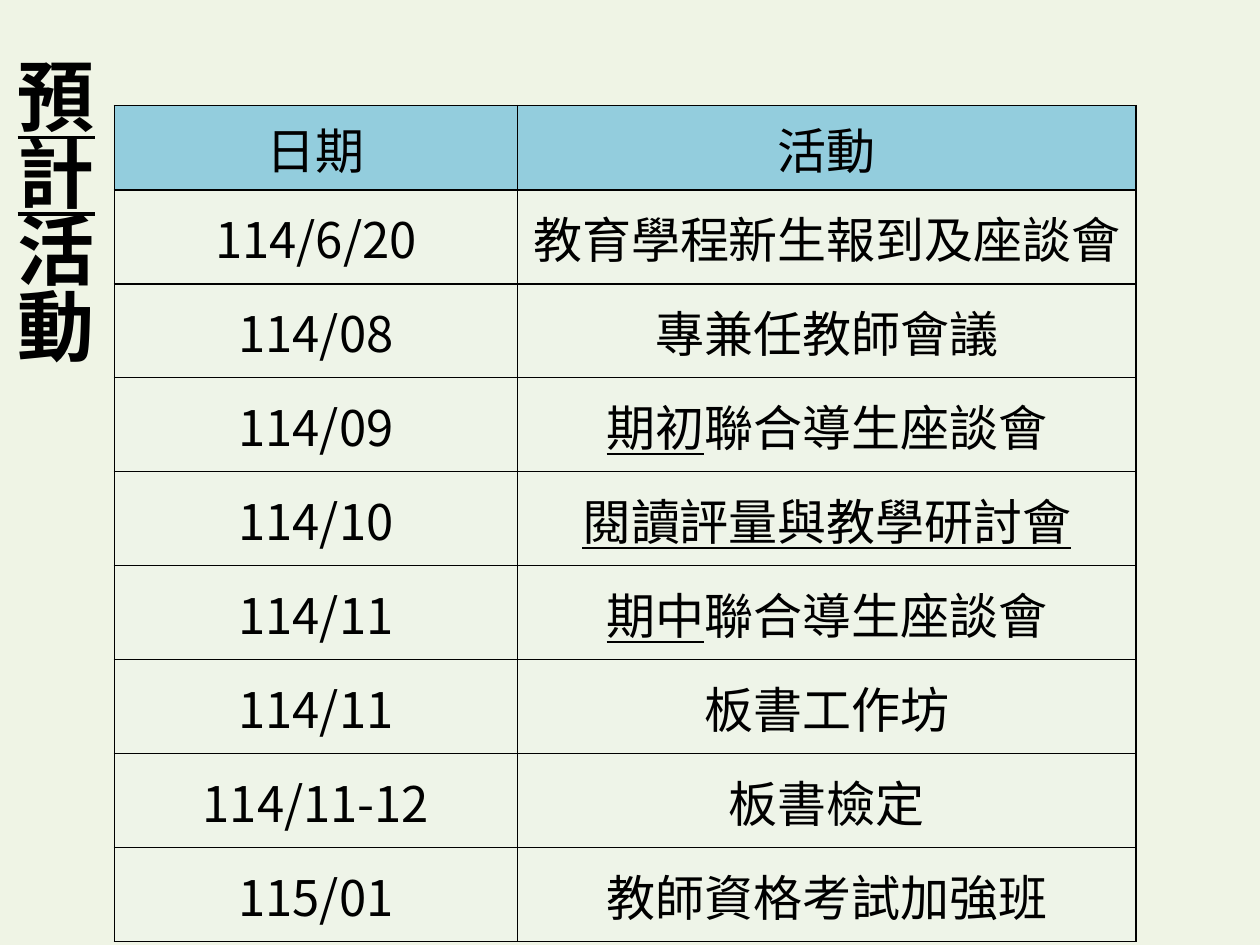
"""Build the slide of planned activities with a vertical title and a schedule table."""
from dataclasses import dataclass

from lxml.etree import SubElement
from pptx import Presentation
from pptx.dml.color import RGBColor
from pptx.enum.text import MSO_ANCHOR, MSO_AUTO_SIZE, PP_ALIGN
from pptx.oxml.ns import qn
from pptx.util import Pt

COLORS = {"background": "EFF4E5", "header": "93CDDD", "body": "EEF4E8", "ink": "000000"}
FONT = "Noto Sans CJK SC"
TITLE_FORMAT = {"size": Pt(44), "bold": True}
CELL_FORMAT = {"size": Pt(28), "bold": False}
COLUMN_WIDTHS = (230.4, 353.5)
HEADER_HEIGHT, BODY_HEIGHT = 48.2, 53.7


@dataclass(frozen=True)
class Activity:
    """A schedule row whose activity may begin with underlined words."""

    date: str
    plain: str = ""
    underlined: str = ""


SCHEDULE = (
    Activity("日期", "活動"),
    Activity("114/6/20", "教育學程新生報到及座談會"),
    Activity("114/08", "專兼任教師會議"),
    Activity("114/09", "聯合導生座談會", "期初"),
    Activity("114/10", underlined="閱讀評量與教學研討會"),
    Activity("114/11", "聯合導生座談會", "期中"),
    Activity("114/11", "板書工作坊"),
    Activity("114/11-12", "板書檢定"),
    Activity("115/01", "教師資格考試加強班"),
)


def add_run(paragraph, text: str, underline: bool, font_format: dict) -> None:
    """Append formatted text in the slide font."""
    if not text:
        return
    run = paragraph.add_run()
    run.text = text
    values = {**font_format, "name": FONT, "underline": underline}
    for attribute, value in values.items():
        setattr(run.font, attribute, value)
    run.font.color.rgb = RGBColor.from_string(COLORS["ink"])
    SubElement(run.font._element, qn("a:ea"), typeface=FONT)


def add_borders(cell) -> None:
    """Draw a one-point line on each side of a cell."""
    properties = cell._tc.get_or_add_tcPr()
    for position, side in enumerate(("lnL", "lnR", "lnT", "lnB")):
        line = SubElement(properties, qn(f"a:{side}"), w=str(Pt(1)))
        fill = SubElement(line, qn("a:solidFill"))
        SubElement(fill, qn("a:srgbClr"), val=COLORS["ink"])
        properties.remove(line)
        properties.insert(position, line)


def fill_cell(cell, underlined: str, plain: str, color: str, side_margin: float) -> None:
    """Write and format one table cell."""
    values = {
        "margin_left": Pt(side_margin),
        "margin_right": Pt(side_margin),
        "margin_top": Pt(0.7),
        "margin_bottom": Pt(0),
        "vertical_anchor": MSO_ANCHOR.MIDDLE,
    }
    for attribute, value in values.items():
        setattr(cell, attribute, value)
    cell.fill.solid()
    cell.fill.fore_color.rgb = RGBColor.from_string(color)
    add_borders(cell)
    paragraph = cell.text_frame.paragraphs[0]
    paragraph.alignment = PP_ALIGN.CENTER
    add_run(paragraph, underlined, True, CELL_FORMAT)
    add_run(paragraph, plain, False, CELL_FORMAT)


def add_title(slide) -> None:
    """Place the title in a box one character wide."""
    title = slide.shapes.title
    title.left, title.top, title.width, title.height = Pt(2.9), Pt(-30), Pt(63.4), Pt(309)
    frame_format = {
        "word_wrap": True,
        "auto_size": MSO_AUTO_SIZE.NONE,
        "vertical_anchor": MSO_ANCHOR.MIDDLE,
    }
    for attribute, value in frame_format.items():
        setattr(title.text_frame, attribute, value)
    paragraph = title.text_frame.paragraphs[0]
    paragraph.alignment = PP_ALIGN.LEFT
    paragraph.line_spacing = 0.83
    add_run(paragraph, "預計", True, TITLE_FORMAT)
    add_run(paragraph, "活動", False, TITLE_FORMAT)


def add_schedule(slide) -> None:
    """Add the table of dates and activities."""
    height = HEADER_HEIGHT + BODY_HEIGHT * (len(SCHEDULE) - 1)
    table = slide.shapes.add_table(
        len(SCHEDULE), len(COLUMN_WIDTHS), Pt(65.3), Pt(60.3), Pt(sum(COLUMN_WIDTHS)), Pt(height)
    ).table
    for column, width in zip(table.columns, COLUMN_WIDTHS):
        column.width = Pt(width)
    for index, activity in enumerate(SCHEDULE):
        table.rows[index].height = Pt(BODY_HEIGHT if index else HEADER_HEIGHT)
        color = COLORS["body" if index else "header"]
        side_margin = 2.2 if index < 2 else 3.6
        fill_cell(table.cell(index, 0), "", activity.date, color, side_margin)
        fill_cell(table.cell(index, 1), activity.underlined, activity.plain, color, side_margin)


def main() -> None:
    """Create and save the presentation."""
    presentation = Presentation()
    presentation.slide_width, presentation.slide_height = Pt(720), Pt(540)
    slide = presentation.slides.add_slide(presentation.slide_layouts[5])
    slide.background.fill.solid()
    slide.background.fill.fore_color.rgb = RGBColor.from_string(COLORS["background"])
    add_title(slide)
    add_schedule(slide)
    presentation.save("out.pptx")


if __name__ == "__main__":
    main()
